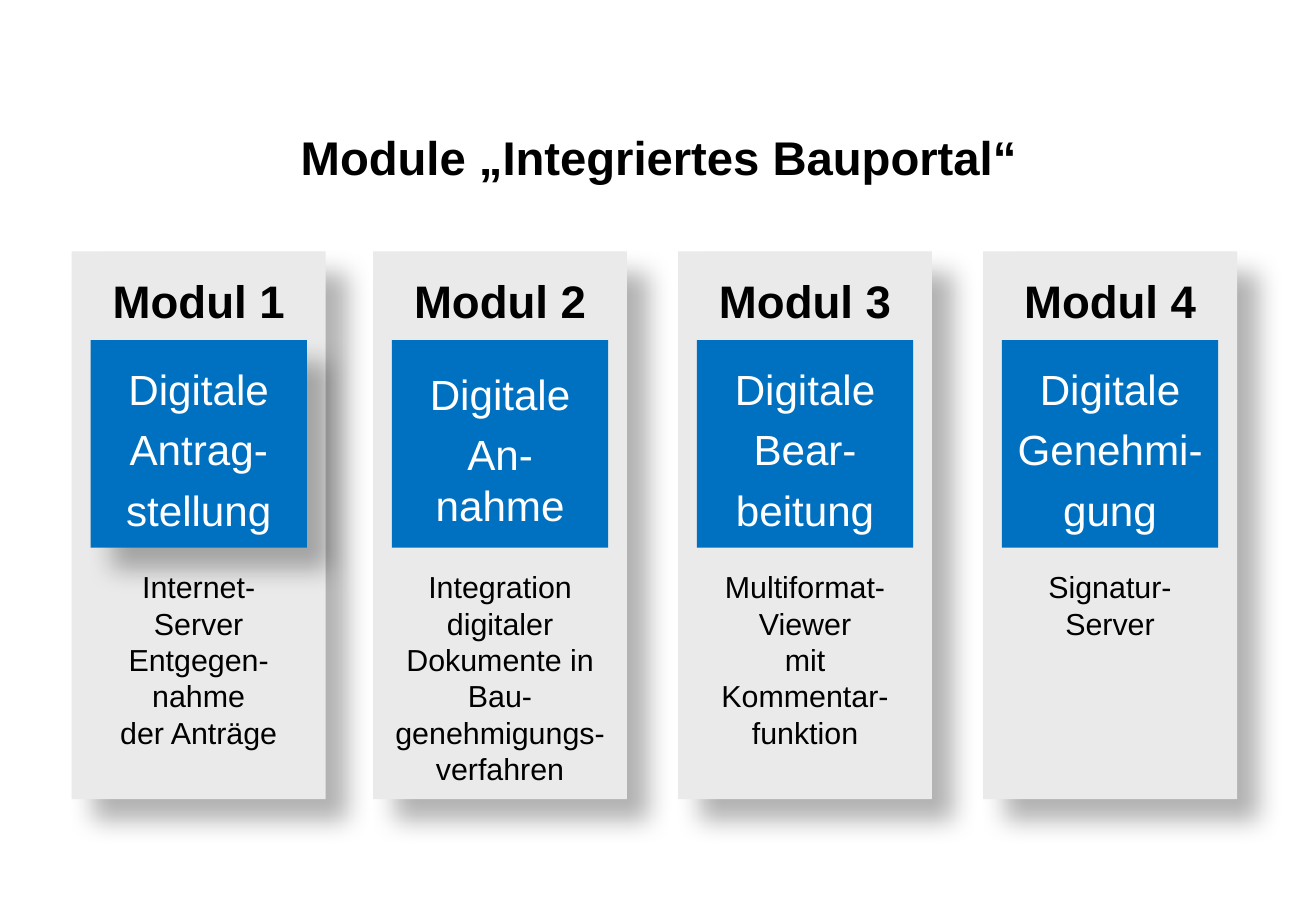
"""Build the slide on the four modules of the building portal."""
from lxml.etree import SubElement as Sub
from pptx import Presentation
from pptx.dml.color import RGBColor as Rgb
from pptx.enum.shapes import MSO_SHAPE as Shape
from pptx.enum.text import MSO_ANCHOR as Anchor, PP_ALIGN as Align
from pptx.oxml.ns import qn
from pptx.util import Inches, Pt

TITLE = "Module „Integriertes Bauportal“"
MODULES = [
    {"left": 0.59, "wide": 1.7, "step": ["Digitale", "Antrag-", "stellung"],
     "body": ["Internet-Server", "Entgegen-", "nahme", "der Anträge"], "raised": True},
    {"left": 3.07, "wide": 2.19, "step": ["Digitale", "An-nahme"],
     "body": ["Integration digitaler Dokumente in Bau-\vgenehmigungs-verfahren"],
     "raised": False},
    {"left": 5.58, "wide": 1.95, "step": ["Digitale", "Bear-", "beitung"],
     "body": ["Multiformat-\vViewer\vmit\vKommentar-\vfunktion"], "raised": False},
    {"left": 8.09, "wide": 1.7, "step": ["Digitale", "Genehmi-", "gung"],
     "body": ["Signatur-Server"], "raised": False},
]
COLORS = {"panel": "EAEAEA", "step": "0070C0", "dark": "000000", "light": "FFFFFF"}
FONT = "Arial"
TOP, WIDE, HIGH = 2.07, 2.09, 4.51


def write(shape, lines, size, color="dark", bold=False, inset=0.05, gap=0, ls=None,
          anchor=Anchor.TOP):
    frame = shape.text_frame
    frame.word_wrap = True
    frame.vertical_anchor = anchor
    frame.margin_left = frame.margin_right = Inches(0.1)
    frame.margin_top, frame.margin_bottom = Inches(inset), Inches(0.05)
    for i, line in enumerate(lines):
        para = frame.add_paragraph() if i else frame.paragraphs[0]
        para.alignment = Align.CENTER
        if ls:
            para.line_spacing = ls
        if i and gap:
            para.space_before = Pt(gap)
        for j, part in enumerate(line.split("\v")):
            if j:
                para.add_line_break()
            run = para.add_run()
            run.text = part
            font = run.font
            font.name, font.size, font.bold = FONT, Pt(size), bold
            font.color.rgb = Rgb.from_string(COLORS[color])


def text(slide, mid, top, wide, high, lines, size, **style):
    box = slide.shapes.add_textbox(
        Inches(mid - wide / 2), Inches(top), Inches(wide), Inches(high))
    write(box, lines, size, **style)


def block(slide, mid, top, wide, high, fill, raised):
    box = slide.shapes.add_shape(
        Shape.RECTANGLE, Inches(mid - wide / 2), Inches(top), Inches(wide), Inches(high))
    box.fill.solid()
    box.fill.fore_color.rgb = Rgb.from_string(COLORS[fill])
    box.line.fill.background()
    box.shadow.inherit = False
    if raised:
        fx = box._element.spPr.find(qn("a:effectLst"))
        shade = Sub(fx, qn("a:outerShdw"), blurRad=str(Pt(15)), dist=str(Pt(18)),
                    dir="2700000", algn="tl", rotWithShape="0")
        tint = Sub(shade, qn("a:srgbClr"), val=COLORS["dark"])
        Sub(tint, qn("a:alpha"), val="30000")
    return box


def main():
    deck = Presentation()
    deck.slide_width, deck.slide_height = Inches(10.83), Inches(7.5)
    slide = deck.slides.add_slide(deck.slide_layouts[6])
    text(slide, 5.42, 0.83, 9.75, 0.92, [TITLE], 28, bold=True, anchor=Anchor.MIDDLE)
    for num, mod in enumerate(MODULES, 1):
        mid = mod["left"] + WIDE / 2
        block(slide, mid, TOP, WIDE, HIGH, "panel", True)
        text(slide, mid, TOP, WIDE, 0.65, [f"Modul {num}"], 27, bold=True, inset=0.09, ls=1.2)
        step = block(slide, mid, 2.8, 1.78, 1.71, "step", mod["raised"])
        write(step, mod["step"], 25, color="light", inset=0.13, gap=6, anchor=Anchor.MIDDLE)
        text(slide, mid, 4.63, mod["wide"], 1.74, mod["body"], 18)
    deck.save("out.pptx")


if __name__ == "__main__":
    main()
